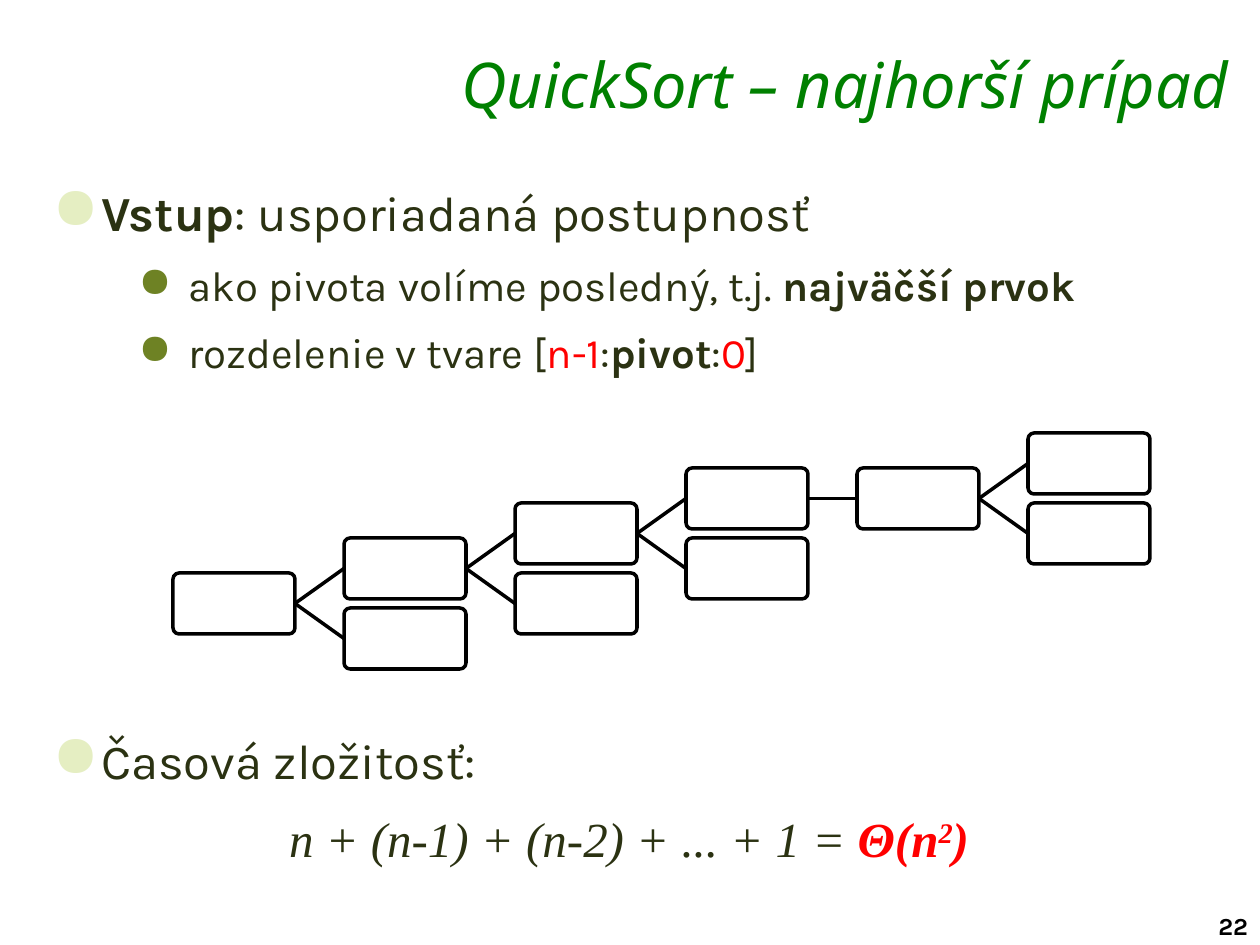
from lxml import etree
from pptx import Presentation
from pptx import util as u
from pptx.dml.color import RGBColor
from pptx.enum import shapes, text
from pptx.oxml import ns

THEME = dict(
    ink="2B3212", red="FF0000", green="008000", black="000000", white="FFFFFF",
    pale="E5EEC2", olive="6E8224",
    sans="Karla", head="Noto Sans", math="Times New Roman",
    title=36, main=28, sub=24, page=14, line=2,
)
T = THEME
RED = dict(color=T["red"])
BOLD = dict(bold=True)
SUM = dict(font=T["math"], italic=True)
THETA = dict(SUM, bold=True, color=T["red"])

TOP = dict(size=T["main"], left=49, hang=49, dot=T["pale"], scale=120, gap=5.6)
SUB = dict(size=T["sub"], left=136, hang=50, dot=T["olive"], scale=100, gap=4.8)
MID = dict(size=T["main"], align="CENTER", gap=5.6)

INPUT = [
    (TOP, [("Vstup", BOLD), (": usporiadaná postupnosť", {})]),
    (SUB, [("ako pivota volíme posledný, t.j. ", {}), ("najväčší prvok", BOLD)]),
    (SUB, [("rozdelenie v tvare [", {}), ("n-1", RED), (":", {}),
           ("pivot", BOLD), (":", {}), ("0", RED), ("]", {})]),
]
COST = [
    (TOP, [("Časová zložitosť:", {})]),
    (MID, [("n + (n-1) + (n-2) + ... + 1 = ", SUM), ("Θ(n", THETA),
           ("2", dict(THETA, raised=True)), (")", THETA)]),
]
TITLE = [(dict(size=T["title"], align="RIGHT"),
          [("QuickSort – najhorší prípad",
            dict(font=T["head"], italic=True, color=T["green"]))])]
PAGE = [(dict(size=T["page"]), [("22", dict(bold=True, color=T["black"]))])]

NODES = [(0, 4), (1, 3), (1, 5), (2, 2), (2, 4), (3, 1), (3, 3),
         (4, 1), (5, 0), (5, 2)]
LINKS = [(0, 1), (0, 2), (1, 3), (1, 4), (3, 5), (3, 6), (5, 7), (7, 8), (7, 9)]
TREE = dict(x=173, y=433, dx=171, dy=35, w=122, h=61)


def px(n):
    return u.Emu(round(n * 914400 / 126))


def rgb(code):
    return RGBColor.from_string(code)


def add_dot(para, left, hang, dot, scale):
    prop = para._p.get_or_add_pPr()
    prop.set("marL", str(px(left)))
    prop.set("indent", str(px(-hang)))
    tint = etree.SubElement(prop, ns.qn("a:buClr"))
    etree.SubElement(tint, ns.qn("a:srgbClr"), val=dot)
    etree.SubElement(prop, ns.qn("a:buSzPct"), val=str(scale * 1000))
    etree.SubElement(prop, ns.qn("a:buChar"), char="●")


def add_run(para, words, size, font=T["sans"], color=T["ink"], bold=False,
            italic=False, raised=False):
    run = para.add_run()
    run.text = words
    face = run.font
    face.name, face.size = font, u.Pt(size)
    face.bold, face.italic = bold, italic
    face.color.rgb = rgb(color)
    if raised:
        run._r.get_or_add_rPr().set("baseline", "30000")


def add_text(slide, paras, x, y, w, h):
    frame = slide.shapes.add_textbox(px(x), px(y), px(w), px(h)).text_frame
    frame.word_wrap = True
    for num, (form, runs) in enumerate(paras):
        para = frame.add_paragraph() if num else frame.paragraphs[0]
        if "dot" in form:
            add_dot(para, form["left"], form["hang"], form["dot"], form["scale"])
        para.alignment = text.PP_ALIGN[form.get("align", "LEFT")]
        gap = u.Pt(form.get("gap", 0))
        para.space_before = gap if num else u.Pt(0)
        para.space_after = gap
        for words, style in runs:
            add_run(para, words, form["size"], **style)


def add_line(line):
    line.color.rgb = rgb(T["black"])
    line.width = u.Pt(T["line"])


def add_tree(slide, x, y, dx, dy, w, h):
    spots = [(x + col * dx, y + row * dy) for col, row in NODES]
    for left, top in spots:
        box = slide.shapes.add_shape(shapes.MSO_SHAPE.ROUNDED_RECTANGLE,
                                     px(left), px(top), px(w), px(h))
        box.adjustments[0] = 0.1
        box.shadow.inherit = False
        box.fill.solid()
        box.fill.fore_color.rgb = rgb(T["white"])
        add_line(box.line)
    for a, b in LINKS:
        (ax, ay), (bx, by) = spots[a], spots[b]
        link = slide.shapes.add_connector(
            shapes.MSO_CONNECTOR.STRAIGHT,
            px(ax + w), px(ay + h / 2), px(bx), px(by + h / 2))
        add_line(link.line)
        etree.SubElement(link._element.spPr, ns.qn("a:effectLst"))


def main():
    deck = Presentation()
    deck.slide_width, deck.slide_height = px(1260), px(945)
    slide = deck.slides.add_slide(deck.slide_layouts[6])
    add_text(slide, PAGE, 1206, 905, 64, 40)
    add_text(slide, TITLE, 289, 39, 951, 73)
    add_text(slide, INPUT, 40, 176, 1178, 220)
    add_text(slide, COST, 40, 724, 1178, 160)
    add_tree(slide, **TREE)
    deck.save("out.pptx")


if __name__ == "__main__":
    main()
